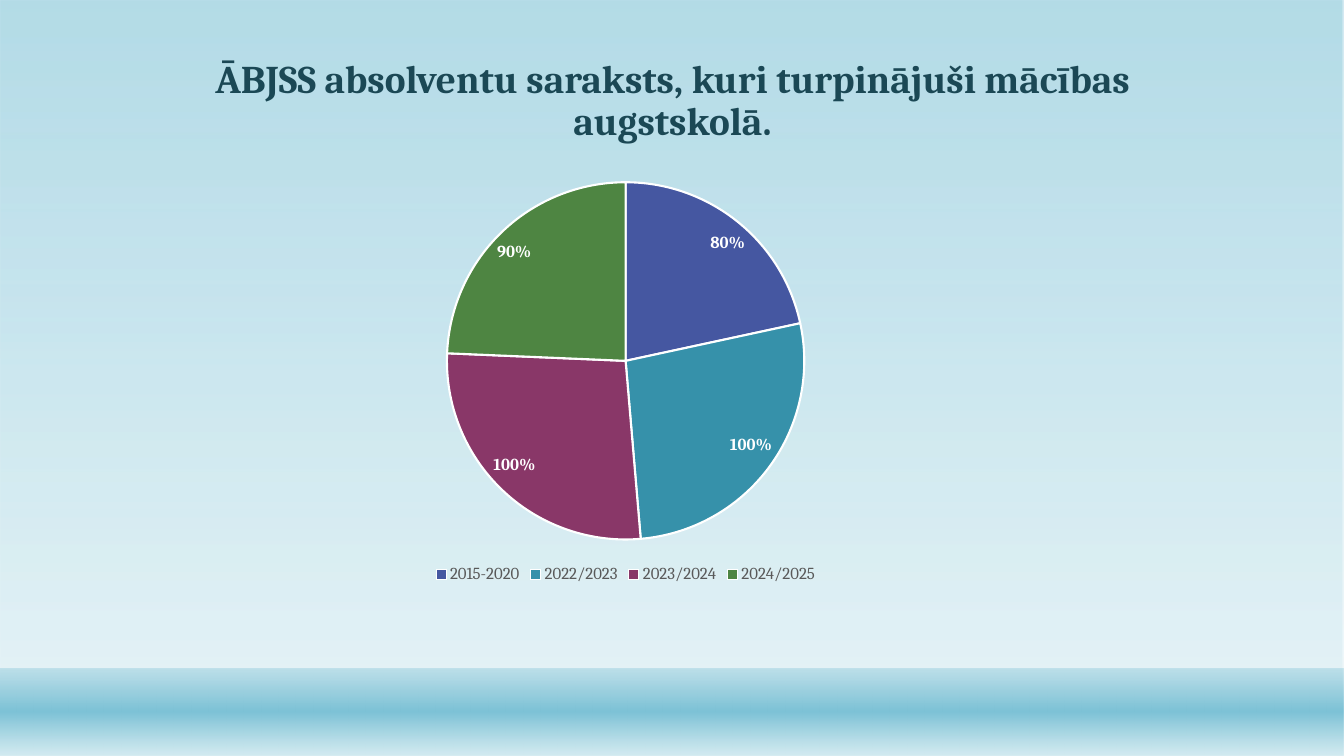
from lxml import etree
from pptx import Presentation
from pptx import util as u
from pptx.chart import data as chart_data
from pptx.dml.color import RGBColor
from pptx.enum import chart as charts, shapes, text
from pptx.oxml import ns

# Content
HEADING = "ĀBJSS absolventu saraksts, kuri turpinājuši mācības augstskolā."
YEARS = ["2015-2020", "2022/2023", "2023/2024", "2024/2025"]
GRADUATES = {"Series 1": [0.8, 1, 1, 0.9], "Series 2": [0, None, None, None]}

# Look
FONT = "Cambria"
COLORS = {"heading": "1B4855", "legend": "595959", "white": "FFFFFF",
          "black": "000000", "water": "7DC2D6", "mist": "D4EBF1"}
SLICES = ["4557A1", "3691AA", "893768", "4E8542"]
WIDTH, HEIGHT = 13.33, 7.5
HORIZON = 6.63

# Bands: top, height, gradient stops as (position %, colour, opacity %)
BANDS = [
    (0, HEIGHT, [(0, "water", 58), (88, "mist", 65)]),
    (HORIZON, HEIGHT - HORIZON,
     [(1, "water", 38), (49, "water", 100), (100, "mist", 89)]),
]


def rgb(name):
    return RGBColor.from_string(COLORS[name])


def style(font, size, color, bold=False):
    font.name, font.size, font.bold = FONT, u.Pt(size), bold
    font.color.rgb = rgb(color)


def fill_gradient(shape, stops):
    shape.fill.gradient()
    shape.fill.gradient_angle = 270  # top to bottom
    stop_list = shape._element.spPr.find(ns.qn("a:gradFill")).find(ns.qn("a:gsLst"))
    for old in list(stop_list):
        stop_list.remove(old)
    for position, color, opacity in stops:
        stop = etree.SubElement(stop_list, ns.qn("a:gs"), pos=str(position * 1000))
        tint = etree.SubElement(stop, ns.qn("a:srgbClr"), val=COLORS[color])
        etree.SubElement(tint, ns.qn("a:alpha"), val=str(opacity * 1000))


def add_bands(slide):
    for depth, (top, height, stops) in enumerate(BANDS):
        band = slide.shapes.add_shape(
            shapes.MSO_SHAPE.RECTANGLE, 0, u.Inches(top),
            u.Inches(WIDTH), u.Inches(height))
        band.shadow.inherit = False
        band.line.fill.background()
        fill_gradient(band, stops)
        slide.shapes._spTree.insert(2 + depth, band._element)  # behind the title


def add_heading(slide):
    heading = slide.shapes.title
    heading.left, heading.top = u.Inches(1.47), u.Inches(0.29)
    heading.width, heading.height = u.Inches(10.4), u.Inches(1.19)
    frame = heading.text_frame
    frame.text = HEADING
    frame.word_wrap = True
    frame.auto_size = text.MSO_AUTO_SIZE.NONE
    frame.vertical_anchor = text.MSO_ANCHOR.BOTTOM
    line = frame.paragraphs[0]
    line.alignment = text.PP_ALIGN.CENTER
    line.line_spacing = 0.9
    style(line.runs[0].font, 28, "heading", bold=True)


def add_pie(slide):
    shares = chart_data.CategoryChartData(number_format="0%")
    shares.categories = YEARS
    for name, values in GRADUATES.items():
        shares.add_series(name, values)
    pie = slide.shapes.add_chart(
        charts.XL_CHART_TYPE.PIE, u.Inches(3.18), u.Inches(1.67),
        u.Inches(6.05), u.Inches(4.16), shares).chart
    style(pie.font, 10, "black")
    pie.has_title = False
    pie.has_legend = True
    pie.legend.position = charts.XL_LEGEND_POSITION.BOTTOM
    pie.legend.include_in_layout = False
    style(pie.legend.font, 12, "legend")

    plot = pie.plots[0]
    plot.vary_by_categories = True
    for index, color in enumerate(SLICES):
        look = plot.series[0].points[index].format
        look.fill.solid()
        look.fill.fore_color.rgb = RGBColor.from_string(color)
        look.line.color.rgb = rgb("white")
        look.line.width = u.Pt(1.5)
    pie.replace_data(shares)  # a new pie holds one series; this adds the second

    labels = plot.series[0].data_labels
    labels.show_value = True
    labels.show_percentage = False
    labels.number_format, labels.number_format_is_linked = "0%", False
    labels.position = charts.XL_LABEL_POSITION.BEST_FIT
    style(labels.font, 12, "white", bold=True)


def main():
    deck = Presentation()
    deck.slide_width, deck.slide_height = u.Inches(WIDTH), u.Inches(HEIGHT)
    slide = deck.slides.add_slide(deck.slide_layouts[5])  # title only
    add_bands(slide)
    add_heading(slide)
    add_pie(slide)
    deck.save("out.pptx")


if __name__ == "__main__":
    main()
